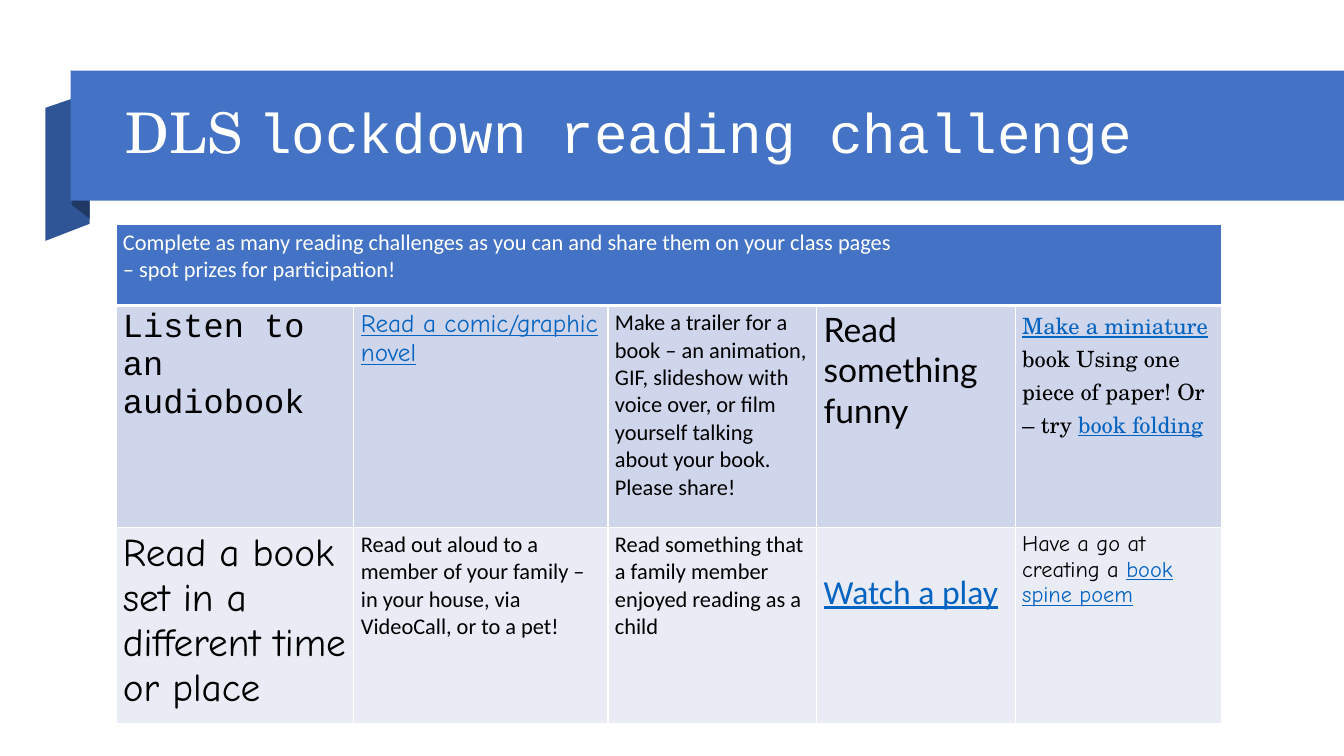
import dataclasses

import pptx
import pptx.util
import pptx.dml.color
import pptx.enum.shapes
import pptx.enum.text
import pptx.oxml
import pptx.oxml.ns

Inches = pptx.util.Inches


@dataclasses.dataclass(frozen=True)
class Theme:
    blue: str = "4472C4"
    fold: str = "2F5597"
    shade: str = "203864"
    white: str = "FFFFFF"
    black: str = "000000"
    link: str = "0563C1"
    band: str = "CFD5EA"
    pale: str = "E9EBF5"
    plain: str = "Calibri"
    comic: str = "Comic Neue"
    mono: str = "Courier New"
    serif: str = "TeX Gyre Schola"
    round: str = "Lato"
    title: int = 40
    huge: int = 28
    large: int = 24
    mid: int = 18
    small: int = 16


T = Theme()

# Each cell: font, size, parts; a part is its text and whether it is a link
ROWS = [
    [
        (T.mono, T.large, [("Listen to an audiobook", False)]),
        (T.comic, T.mid, [("Read a comic/graphic novel", True)]),
        (T.plain, T.small, [("Make a trailer for a book – an animation, GIF, slideshow with "
                             "voice over, or film yourself talking about your book. "
                             "Please share!", False)]),
        (T.round, T.large, [("Read something funny", False)]),
        (T.serif, T.small, [("Make a miniature ", True),
                            ("book Using one piece of paper! Or – try ", False),
                            ("book folding", True)]),
    ],
    [
        (T.comic, T.huge, [("Read a book set in a different time or place", False)]),
        (T.plain, T.small, [("Read out aloud to a member of your family – in your house, "
                             "via VideoCall, or to a pet!", False)]),
        (T.plain, T.small, [("Read something that a family member enjoyed reading "
                             "as a child", False)]),
        (T.plain, T.large, [("Watch a play", True)]),
        (T.comic, T.small, [("Have a go at creating a ", False),
                            ("book spine poem", True)]),
    ],
]
COLS = [2.36, 2.52, 2.07, 1.97, 2.05]
HEIGHTS = [0.8, 2.2, 1.32]


def rgb(code):
    return pptx.dml.color.RGBColor.from_string(code)


def paint(shape, color):
    shape.shadow.inherit = False
    shape.fill.solid()
    shape.fill.fore_color.rgb = rgb(color)
    shape.line.fill.background()


def add_fold(slide, points, color):
    start, *rest = [(Inches(x), Inches(y)) for x, y in points]
    form = slide.shapes.build_freeform(*start)
    form.add_line_segments(rest, close=True)
    paint(form.convert_to_shape(), color)


def add_run(para, text, font, size, color, line=False):
    run = para.add_run()
    run.text = text
    run.font.name = font
    run.font.size = pptx.util.Pt(size)
    run.font.color.rgb = rgb(color)
    run.font.underline = line


def add_title(slide):
    box = slide.shapes.add_textbox(Inches(1.15), Inches(0.86), Inches(11.27), Inches(0.96))
    frame = box.text_frame
    frame.word_wrap = True
    frame.vertical_anchor = pptx.enum.text.MSO_ANCHOR.MIDDLE
    para = frame.paragraphs[0]
    para.line_spacing = 0.9
    add_run(para, "DLS ", T.serif, T.title, T.white)
    add_run(para, "lockdown reading challenge", T.mono, T.title, T.white)


def style_cell(cell, color, base=1):
    cell.margin_left = cell.margin_right = Inches(0.07)
    cell.margin_top = cell.margin_bottom = Inches(0.04)
    props = cell._tc.get_or_add_tcPr()
    for side, width in zip("LRTB", (1, 1, 1, base)):
        props.append(pptx.oxml.parse_xml(
            f'<a:ln{side} {pptx.oxml.ns.nsdecls("a")} w="{pptx.util.Pt(width)}">'
            f'<a:solidFill><a:srgbClr val="{T.white}"/></a:solidFill></a:ln{side}>'))
    cell.fill.solid()
    cell.fill.fore_color.rgb = rgb(color)


def add_grid(slide):
    frame = slide.shapes.add_table(len(HEIGHTS), len(COLS), Inches(1.15), Inches(2.23),
                                   Inches(sum(COLS)), Inches(sum(HEIGHTS)))
    grid = frame.table
    grid.first_row = grid.horz_banding = False
    for col, width in zip(grid.columns, COLS):
        col.width = Inches(width)
    for row, height in zip(grid.rows, HEIGHTS):
        row.height = Inches(height)
    # The last row grows with its text
    frame.height = Inches(4.94)

    # Heading across all columns
    for cell in grid.rows[0].cells:
        style_cell(cell, T.blue, base=3)
    head = grid.cell(0, 0)
    head.merge(grid.cell(0, len(COLS) - 1))
    head.text_frame.text = ("Complete as many reading challenges as you can and share them "
                            "on your class pages\n– spot prizes for participation!")
    for para in head.text_frame.paragraphs:
        font = para.runs[0].font
        font.name, font.size = T.plain, pptx.util.Pt(T.small)
        font.color.rgb = rgb(T.white)

    # Challenges
    for r, (cells, color) in enumerate(zip(ROWS, (T.band, T.pale)), 1):
        for c, (face, size, parts) in enumerate(cells):
            cell = grid.cell(r, c)
            style_cell(cell, color)
            for text, link in parts:
                add_run(cell.text_frame.paragraphs[0], text, face, size,
                        T.link if link else T.black, link)

    # The play sits one line lower
    grid.cell(2, 3).margin_top = Inches(0.45)


def main():
    deck = pptx.Presentation()
    deck.slide_width, deck.slide_height = Inches(13.33), Inches(7.5)
    slide = deck.slides.add_slide(deck.slide_layouts[6])

    # Ribbon
    add_fold(slide, [(0.89, 2.22), (0.45, 2.39), (0.45, 1.07), (0.89, 0.92)], T.fold)
    add_fold(slide, [(0.89, 2.17), (0.71, 2.03), (0.71, 0.7), (0.89, 0.85)], T.shade)
    band = slide.shapes.add_shape(pptx.enum.shapes.MSO_SHAPE.RECTANGLE, Inches(0.7),
                                  Inches(0.7), Inches(12.63), Inches(1.29))
    paint(band, T.blue)

    add_title(slide)
    add_grid(slide)
    deck.save("out.pptx")


if __name__ == "__main__":
    main()
